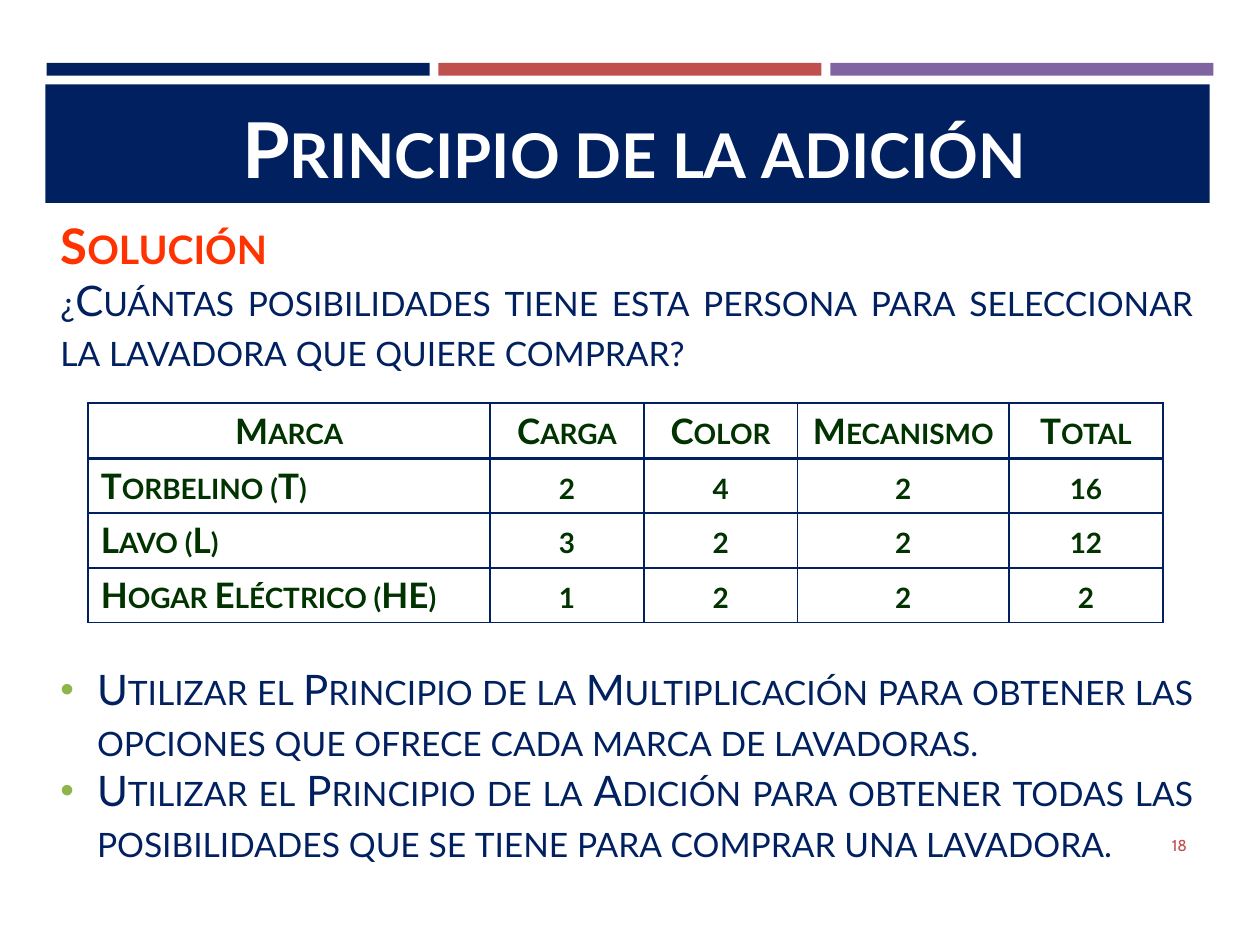
from dataclasses import dataclass

from lxml import etree
from pptx import Presentation
from pptx.dml.color import RGBColor
from pptx.enum.shapes import MSO_SHAPE
from pptx.enum.text import MSO_ANCHOR, MSO_AUTO_SIZE, PP_ALIGN
from pptx.oxml.ns import qn
from pptx.util import Inches, Pt

RECTANGLE = MSO_SHAPE.RECTANGLE
LEFT, CENTER, RIGHT, JUSTIFY = PP_ALIGN.LEFT, PP_ALIGN.CENTER, PP_ALIGN.RIGHT, PP_ALIGN.JUSTIFY
TOP, MIDDLE, BOTTOM = MSO_ANCHOR.TOP, MSO_ANCHOR.MIDDLE, MSO_ANCHOR.BOTTOM
NO_AUTOFIT = MSO_AUTO_SIZE.NONE


@dataclass(frozen=True)
class Theme:
    navy: str = "002060"
    red: str = "C0504D"
    purple: str = "8064A2"
    orange: str = "FF3300"
    forest: str = "003300"
    bullet: str = "8CB64A"
    white: str = "FFFFFF"
    font: str = "Lato"
    number_font: str = "Cabin"
    title_size: int = 44
    heading_size: int = 28
    body_size: int = 24
    table_size: int = 20
    number_size: int = 9


@dataclass(frozen=True)
class Band:
    left: float
    top: float
    width: float
    height: float
    color: str


THEME = Theme()
BANDS = [
    Band(0.37 + 3.11 * position, 0.5, 3.04, 0.1, color)
    for position, color in enumerate((THEME.navy, THEME.red, THEME.purple))
] + [Band(0.36, 0.67, 9.24, 0.94, THEME.navy)]

QUESTION = "¿Cuántas posibilidades tiene esta persona para seleccionar la lavadora que quiere comprar?"
STEPS = [
    "Utilizar el Principio de la Multiplicación para obtener las opciones que ofrece cada marca de lavadoras.",
    "Utilizar el Principio de la Adición para obtener todas las posibilidades que se tiene para comprar una lavadora.",
]
GAP_FOR_TABLE = 165
COLUMN_WIDTHS = [3.19, 1.22, 1.22, 1.68, 1.22]
ROW_HEIGHT = 0.43
OPTIONS = [
    ["Marca", "Carga", "Color", "Mecanismo", "Total"],
    ["Torbelino (T)", "2", "4", "2", "16"],
    ["Lavo (L)", "3", "2", "2", "12"],
    ["Hogar Eléctrico (HE)", "1", "2", "2", "2"],
]


def write(paragraph, text: str, *, size: int, color: str, align=LEFT, bold: bool = False,
          font: str = THEME.font, small_caps: bool = True) -> None:
    """Put one formatted run of text in a paragraph."""
    paragraph.alignment = align
    paragraph.line_spacing = 1.0
    paragraph.space_before = paragraph.space_after = Pt(0)
    run = paragraph.add_run()
    run.text = text
    run.font.size = Pt(size)
    run.font.bold = bold
    run.font.name = font
    run.font.color.rgb = RGBColor.from_string(color)
    if small_caps:
        run.font._element.set("cap", "small")


def set_bullet(paragraph, character: str = "", indent: float = 0) -> None:
    """Give a paragraph a hanging bullet, or none."""
    properties = paragraph._p.get_or_add_pPr()
    properties.set("marL", str(Inches(indent)))
    properties.set("indent", str(-Inches(indent)))
    if not character:
        etree.SubElement(properties, qn("a:buNone"))
        return
    bullet_color = etree.SubElement(properties, qn("a:buClr"))
    etree.SubElement(bullet_color, qn("a:srgbClr"), val=THEME.bullet)
    etree.SubElement(properties, qn("a:buSzPct"), val="92000")
    etree.SubElement(properties, qn("a:buFont"), typeface="Arial")
    etree.SubElement(properties, qn("a:buChar"), char=character)


def place(shape, left: float, top: float, width: float, height: float, anchor):
    """Position a text shape and return its text frame."""
    shape.left, shape.top = Inches(left), Inches(top)
    shape.width, shape.height = Inches(width), Inches(height)
    frame = shape.text_frame
    frame.word_wrap = True
    frame.auto_size = NO_AUTOFIT
    frame.vertical_anchor = anchor
    return frame


def draw_band(slide, band: Band, depth: int) -> None:
    """Draw a coloured band behind the placeholders."""
    bar = slide.shapes.add_shape(
        RECTANGLE, Inches(band.left), Inches(band.top), Inches(band.width), Inches(band.height))
    bar.shadow.inherit = False
    bar.fill.solid()
    bar.fill.fore_color.rgb = RGBColor.from_string(band.color)
    bar.line.fill.background()
    slide.shapes.element.insert(2 + depth, bar.element)


def set_borders(cell, *, top: int, bottom: int) -> None:
    """Draw the four borders of a cell with widths in points."""
    properties = cell._tc.get_or_add_tcPr()
    sides = {"lnL": 1, "lnR": 1, "lnT": top, "lnB": bottom}
    for position, (side, width) in enumerate(sides.items()):
        border = etree.Element(qn(f"a:{side}"), w=str(Pt(width)))
        fill = etree.SubElement(border, qn("a:solidFill"))
        etree.SubElement(fill, qn("a:srgbClr"), val=THEME.navy)
        properties.insert(position, border)


def draw_options(slide) -> None:
    """Draw the table of options for each brand."""
    table = slide.shapes.add_table(
        len(OPTIONS), len(COLUMN_WIDTHS), Inches(0.7), Inches(3.2),
        Inches(sum(COLUMN_WIDTHS)), Inches(ROW_HEIGHT * len(OPTIONS))).table
    for column, width in zip(table.columns, COLUMN_WIDTHS):
        column.width = Inches(width)
    for row_index, values in enumerate(OPTIONS):
        table.rows[row_index].height = Inches(ROW_HEIGHT)
        for column_index, value in enumerate(values):
            cell = table.cell(row_index, column_index)
            cell.fill.background()
            cell.vertical_anchor = MIDDLE
            is_brand = row_index > 0 and column_index == 0
            write(cell.text_frame.paragraphs[0], value, size=THEME.table_size,
                  color=THEME.forest, bold=True, align=LEFT if is_brand else CENTER)
            set_borders(cell, top=2 if row_index == 1 else 1, bottom=2 if row_index == 0 else 1)


def fill_body(frame) -> None:
    """Write the heading, the question and the bulleted steps."""
    heading = frame.paragraphs[0]
    write(heading, "Solución", size=THEME.heading_size, color=THEME.orange, bold=True, align=JUSTIFY)
    set_bullet(heading)
    question = frame.add_paragraph()
    write(question, QUESTION, size=THEME.body_size, color=THEME.navy, align=JUSTIFY)
    set_bullet(question)
    for position, text in enumerate(STEPS):
        step = frame.add_paragraph()
        write(step, text, size=THEME.body_size, color=THEME.navy, align=JUSTIFY)
        set_bullet(step, "•", 0.29)
        if position == 0:
            step.space_before = Pt(GAP_FOR_TABLE)


def main() -> None:
    """Build the slide and save it."""
    deck = Presentation()
    deck.slide_width, deck.slide_height = Inches(10), Inches(7.5)
    slide = deck.slides.add_slide(deck.slide_layouts[1])
    for depth, band in enumerate(BANDS):
        draw_band(slide, band, depth)
    title = place(slide.shapes.title, 0.44, 0.72, 9.18, 0.87, BOTTOM)
    write(title.paragraphs[0], "Principio de la adición", size=THEME.title_size,
          color=THEME.white, bold=True, align=CENTER)
    fill_body(place(slide.placeholders[1], 0.38, 1.66, 9.19, 5.82, TOP))
    draw_options(slide)
    number_box = slide.shapes.add_textbox(0, 0, 0, 0)
    number = place(number_box, 8.66, 6.51, 0.86, 0.4, MIDDLE)
    write(number.paragraphs[0], "18", size=THEME.number_size, color=THEME.red,
          align=RIGHT, font=THEME.number_font, small_caps=False)
    deck.save("out.pptx")


if __name__ == "__main__":
    main()
